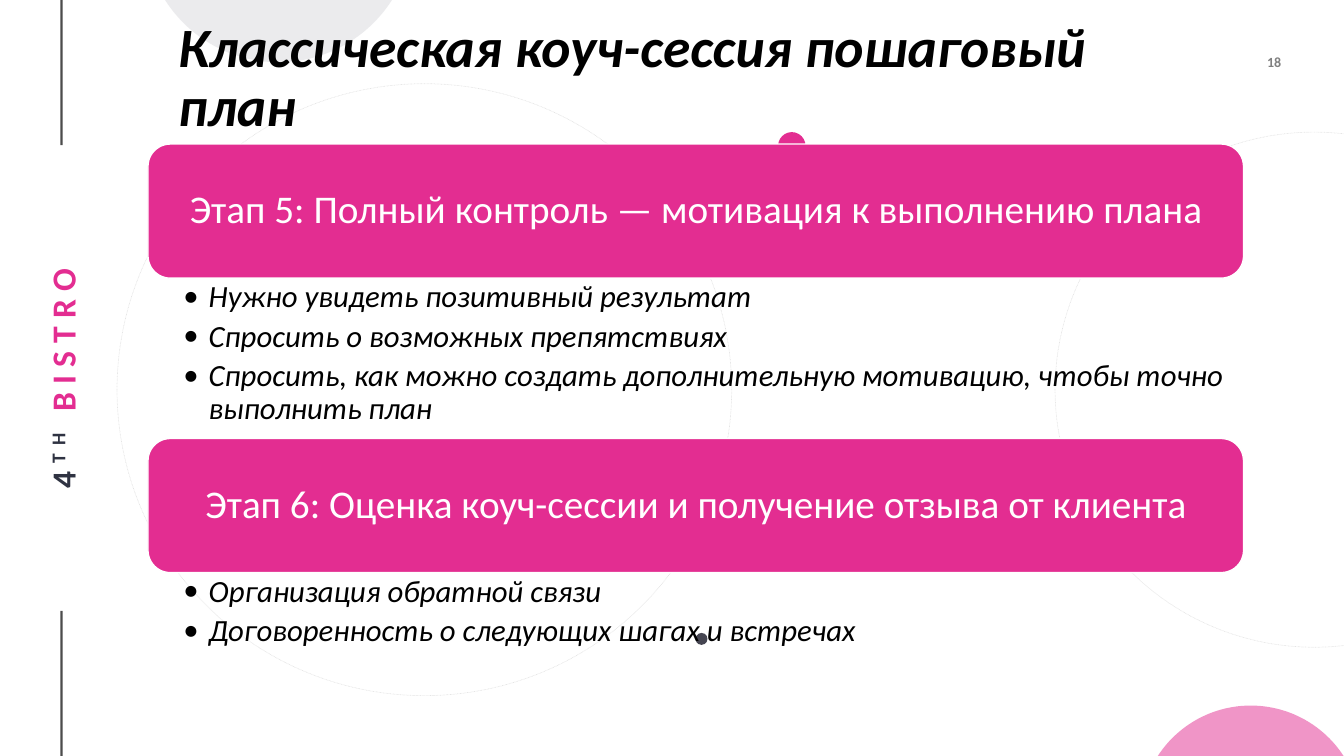
"""Build the coaching session slide with stages five and six."""
from math import asin, cos, pi, sin

from lxml.etree import SubElement
from pptx import Presentation
from pptx.dml.color import RGBColor
from pptx.enum.dml import MSO_LINE_DASH_STYLE as Dash
from pptx.enum.shapes import MSO_CONNECTOR as Connector, MSO_SHAPE as Shape
from pptx.enum.text import MSO_ANCHOR as Anchor, MSO_AUTO_SIZE as AutoSize, PP_ALIGN as Align
from pptx.oxml.ns import qn
from pptx.util import Cm, Pt

PINK, BLACK, WHITE, NAVY = "E32D91", "000000", "FFFFFF", "2F3342"
TITLE = "Классическая коуч-сессия пошаговый план"
STAGES = [
    ("Этап 5: Полный контроль — мотивация к выполнению плана", 4.04, [
        "Нужно увидеть позитивный результат",
        "Спросить о возможных препятствиях",
        "Спросить, как можно создать дополнительную мотивацию, чтобы точно выполнить план",
    ]),
    ("Этап 6: Оценка коуч-сессии и получение отзыва от клиента", 3, [
        "Организация обратной связи",
        "Договоренность о следующих шагах и встречах",
    ]),
]
WORDMARK = [("4", NAVY, 0), ("TH ", NAVY, 30), ("BISTRO", PINK, 0)]
SIDE_LINES = [(15.39, 19.05), (0, 3.66)]
RINGS = [(26.59, 3.33, 13.06, 12.98), (2.95, 2.11, 15.49, 15.42)]
DOTS = [(17.53, 15.95, 0.3, "454551"), (19.61, 3.33, 0.69, PINK)]
DOMES = [(31.52, 19.05, 2.34, -1.27, PINK), (7.02, 0, 2.86, 1.57, "D8D9DC")]
STAGE_LEFT, STAGE_TOP, STAGE_WIDTH, BAR_HEIGHT = 3.73, 3.63, 27.61, 3.38


def paint(color_format, color, alpha=100):
    """Set a colour, with opacity in percent."""
    color_format.rgb = RGBColor.from_string(color)
    return alpha


def fill_with(fill, color, alpha=100):
    """Give a fill a solid colour and opacity."""
    fill.solid()
    paint(fill.fore_color, color)
    if alpha < 100:
        node = fill._xPr.find(qn("a:solidFill"))[0]
        SubElement(node, qn("a:alpha")).set("val", str(alpha * 1000))


def add_span(para, text, size=22, color=BLACK, bold=False, italic=False, alpha=100,
             spacing=0, raised=0):
    """Append formatted text to a paragraph."""
    span = para.add_run()
    span.text = text
    font = span.font
    font.name, font.size, font.bold, font.italic = "Calibri", Pt(size), bold, italic
    fill_with(font.fill, color, alpha)
    properties = span._r.get_or_add_rPr()
    if spacing:
        properties.set("spc", str(spacing * 100))
    if raised:
        properties.set("baseline", str(raised * 1000))


def set_frame(shape, anchor, insets):
    """Set wrapping, anchor and insets, and return the text frame."""
    frame = shape.text_frame
    frame.word_wrap, frame.auto_size, frame.vertical_anchor = True, AutoSize.NONE, anchor
    (frame.margin_left, frame.margin_top,
     frame.margin_right, frame.margin_bottom) = map(Cm, insets)
    return frame


def add_bullet(para):
    """Give a paragraph a hanging bullet."""
    properties = para._p.get_or_add_pPr()
    properties.set("marL", str(Cm(0.64)))
    properties.set("indent", str(-Cm(0.64)))
    SubElement(properties, qn("a:buFont")).set("typeface", "Calibri")
    SubElement(properties, qn("a:buChar")).set("char", "•")


def add_plain(shapes, kind, left, top, width, height):
    """Add a preset shape without a shadow."""
    shape = shapes.add_shape(kind, Cm(left), Cm(top), Cm(width), Cm(height))
    shape.shadow.inherit = False
    return shape


def add_dome(shapes, center, base, half, rise, color):
    """Add a circle segment standing on a horizontal base."""
    height = abs(rise)
    radius = (half ** 2 + height ** 2) / (2 * height)
    reach = asin(half / radius)
    if height > half:
        reach = pi - reach
    sign = rise / height
    angles = [reach * (step / 30 - 1) for step in range(61)]
    points = [(Cm(center + radius * sin(angle)),
               Cm(base + sign * (radius * cos(angle) - radius + height)))
              for angle in angles]
    builder = shapes.build_freeform(*points[0])
    builder.add_line_segments(points[1:], close=True)
    dome = builder.convert_to_shape()
    dome.shadow.inherit = False
    fill_with(dome.fill, color, 50)
    dome.line.fill.background()


def add_decor(shapes):
    """Add the side lines, wordmark, page number and circles."""
    for start, end in SIDE_LINES:
        line = shapes.add_connector(Connector.STRAIGHT, Cm(1.55), Cm(start), Cm(1.55), Cm(end))
        line.line.width = Pt(1.5)
        fill_with(line.line.fill, BLACK, 70)
        SubElement(line._element.spPr, qn("a:effectLst"))
    wordmark = shapes.add_textbox(Cm(-4.29), Cm(8.97), Cm(11.71), Cm(1.14))
    wordmark.rotation = 270
    para = set_frame(wordmark, Anchor.MIDDLE, [0.05] * 4).paragraphs[0]
    para.alignment = Align.CENTER
    for text, color, raised in WORDMARK:
        add_span(para, text, size=24, color=color, bold=True, spacing=6, raised=raised)
    number = shapes.add_textbox(Cm(30.33), Cm(1.22), Cm(1.96), Cm(0.69))
    para = set_frame(number, Anchor.MIDDLE, [0] * 4).paragraphs[0]
    para.alignment = Align.RIGHT
    add_span(para, "18", size=10, bold=True, alpha=50)
    for place in RINGS:
        ring = add_plain(shapes, Shape.OVAL, *place)
        ring.fill.background()
        fill_with(ring.line.fill, BLACK, 10)
        ring.line.width, ring.line.dash_style = Pt(0.5), Dash.ROUND_DOT
    for left, top, size, color in DOTS:
        dot = add_plain(shapes, Shape.OVAL, left, top, size, size)
        fill_with(dot.fill, color)
        dot.line.fill.background()
    for dome in DOMES:
        add_dome(shapes, *dome)


def add_stage(shapes, top, heading, height, points):
    """Add a heading bar with its bullet list below."""
    bar = add_plain(shapes, Shape.ROUNDED_RECTANGLE, STAGE_LEFT, top, STAGE_WIDTH, BAR_HEIGHT)
    fill_with(bar.fill, PINK)
    fill_with(bar.line.fill, WHITE)
    bar.line.width = Pt(1)
    para = set_frame(bar, Anchor.MIDDLE, [0.3] * 4).paragraphs[0]
    para.alignment, para.line_spacing = Align.CENTER, 0.9
    add_span(para, heading, size=28, color=WHITE)
    box = shapes.add_textbox(Cm(STAGE_LEFT), Cm(top + BAR_HEIGHT), Cm(STAGE_WIDTH), Cm(height))
    frame = set_frame(box, Anchor.TOP, (0.89, 0.08, 0.43, 0.08))
    for index, point in enumerate(points):
        para = frame.add_paragraph() if index else frame.paragraphs[0]
        para.line_spacing, para.space_after = 0.9, Pt(4.4)
        add_bullet(para)
        add_span(para, point, italic=True)


def main():
    """Assemble and save the slide."""
    deck = Presentation()
    deck.slide_width, deck.slide_height = Cm(33.87), Cm(19.05)
    page = deck.slides.add_slide(deck.slide_layouts[5])
    shapes, title = page.shapes, page.shapes.title
    add_decor(shapes)
    shapes._spTree.append(title._element)
    title.left, title.top, title.width, title.height = map(Cm, (4.24, 1.47, 26.67, 1.04))
    para = set_frame(title, Anchor.MIDDLE, (0.25, 0.13, 0.25, 0.13)).paragraphs[0]
    para.alignment, para.line_spacing = Align.LEFT, 0.9
    add_span(para, TITLE, size=39.6, bold=True, italic=True)
    top = STAGE_TOP
    for heading, height, points in STAGES:
        add_stage(shapes, top, heading, height, points)
        top += BAR_HEIGHT + height
    deck.save("out.pptx")


if __name__ == "__main__":
    main()
